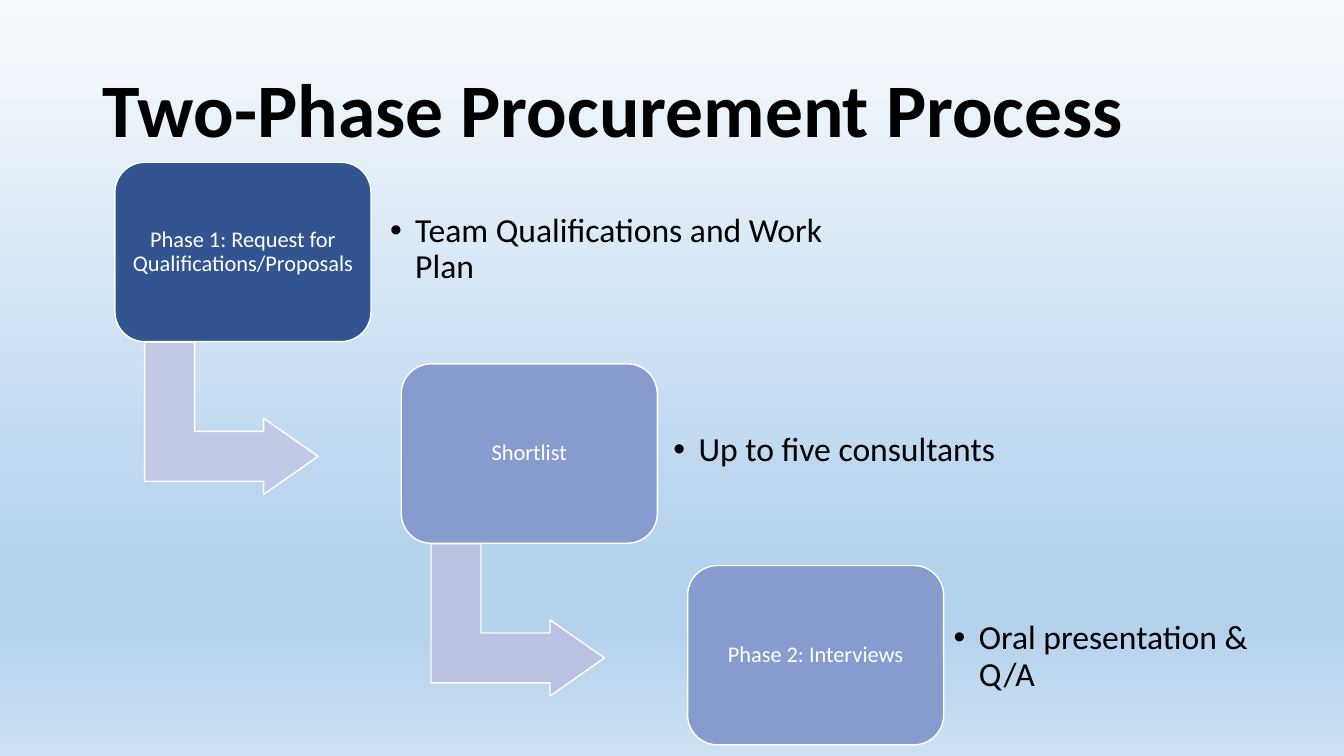
from lxml.etree import SubElement
from pptx import Presentation
from pptx.dml.color import RGBColor
from pptx.enum.shapes import MSO_SHAPE as Shape
from pptx.enum.text import MSO_ANCHOR as Anchor, PP_ALIGN as Align
from pptx.oxml.ns import qn
from pptx.util import Inches, Pt

BLACK = RGBColor(0x00, 0x00, 0x00)
WHITE = RGBColor(0xFF, 0xFF, 0xFF)
NAVY = RGBColor(0x32, 0x54, 0x91)
PERIWINKLE = RGBColor(0x87, 0x9B, 0xCE)
LAVENDER = RGBColor(0xC1, 0xC9, 0xE4)
LILAC = RGBColor(0xB9, 0xC2, 0xE1)
PALE = RGBColor(0xF7, 0xFA, 0xFD)
SKY = RGBColor(0xB5, 0xD2, 0xEC)
MIST = RGBColor(0xCE, 0xE1, 0xF2)

BACKGROUND_STOPS = [(0, PALE), (74, SKY), (83, SKY), (100, MIST)]
STEP_X, STEP_Y = 2.84, 2.0

PHASES = [
    ("Phase 1: Request for Qualifications/Proposals", NAVY, LAVENDER,
     "Team Qualifications and Work Plan", (3.77, 1.76, 4.9, 1.44)),
    ("Shortlist", PERIWINKLE, LILAC,
     "Up to five consultants", (6.58, 3.75, 4.71, 1.44)),
    ("Phase 2: Interviews", PERIWINKLE, None,
     "Oral presentation & Q/A", (9.36, 5.8, 3.28, 1.44)),
]


def paint_background(page):
    fill = page.background.fill
    fill.gradient()
    fill.gradient_angle = 270
    stops = page.element.find(".//" + qn("a:gsLst"))
    stops.clear()
    for percent, color in BACKGROUND_STOPS:
        stop = SubElement(stops, qn("a:gs"), pos=str(percent * 1000))
        SubElement(stop, qn("a:srgbClr"), val=str(color))


def write_text(box, text, size, color=BLACK, bold=False, align=Align.LEFT,
               margins=(0.1, 0.1), bullet=False):
    frame = box.text_frame
    frame.word_wrap = True
    frame.vertical_anchor = Anchor.MIDDLE
    frame.margin_left = frame.margin_right = Inches(margins[0])
    frame.margin_top = frame.margin_bottom = Inches(margins[1])
    para = frame.paragraphs[0]
    para.alignment = align
    para.line_spacing = 0.9
    if bullet:
        properties = para._p.get_or_add_pPr()
        properties.set("marL", str(Inches(0.25)))
        properties.set("indent", str(Inches(-0.25)))
        SubElement(properties, qn("a:buFont"), typeface="Arial")
        SubElement(properties, qn("a:buChar"), char="•")
    span = para.add_run()
    span.text = text
    span.font.name = "Calibri"
    span.font.size = Pt(size)
    span.font.bold = bold
    span.font.color.rgb = color


def add_text(page, place, text, size, **text_format):
    box = page.shapes.add_textbox(*map(Inches, place))
    write_text(box, text, size, **text_format)


def add_block(page, kind, place, color, adjustments):
    block = page.shapes.add_shape(kind, *map(Inches, place))
    block.shadow.inherit = False
    block.fill.solid()
    block.fill.fore_color.rgb = color
    block.line.color.rgb = WHITE
    block.line.width = Pt(1)
    for index, value in enumerate(adjustments):
        block.adjustments[index] = value
    return block


def add_phase(page, index, label, color, arrow_color, detail, detail_place):
    left, top = 1.14 + index * STEP_X, 1.61 + index * STEP_Y
    if arrow_color is not None:
        arrow = add_block(page, Shape.BENT_UP_ARROW,
                          (left + 0.4, top + 1.68, 1.51, 1.72),
                          arrow_color, (0.328, 0.25, 0.358))
        arrow.rotation = 90
    card = add_block(page, Shape.ROUNDED_RECTANGLE, (left, top, 2.54, 1.78),
                     color, (0.167,))
    write_text(card, label, 16, color=WHITE, align=Align.CENTER,
               margins=(0.07, 0.07))
    add_text(page, detail_place, detail, 24, bullet=True)


def main():
    deck = Presentation()
    deck.slide_width, deck.slide_height = Inches(13.33), Inches(7.5)
    page = deck.slides.add_slide(deck.slide_layouts[6])
    paint_background(page)
    add_text(page, (0.92, 0.4, 11.5, 1.45), "Two-Phase Procurement Process",
             54, bold=True, margins=(0.1, 0.05))
    for index, phase in enumerate(PHASES):
        add_phase(page, index, *phase)
    deck.save("out.pptx")


if __name__ == "__main__":
    main()
